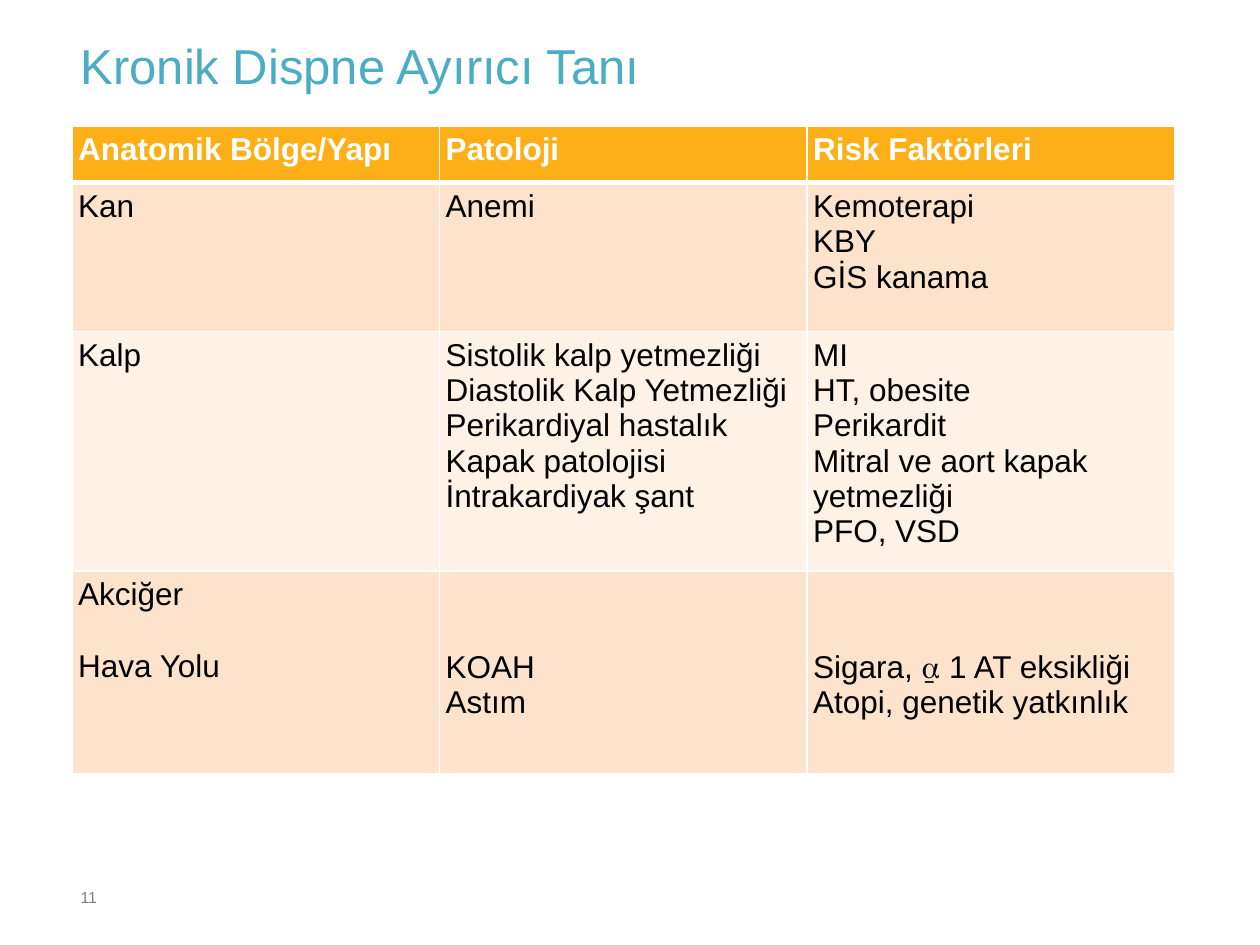
"""Build a slide with a table of causes of chronic dyspnoea."""
import pptx
import pptx.dml.color
import pptx.enum.text
import pptx.oxml
import pptx.oxml.ns
import pptx.util

WIDE, HIGH = 10, 7.5
PAD = 0.05
LINE = 18 * 1.15 / 72
ROWS = [0.45, 1.18, 1.9, 1.61]
FILLS = ["FCAF17", "FEE3CC", "FEF2E7", "FEE3CC"]
CELLS = [
    ["Anatomik Bölge/Yapı", "Patoloji", "Risk Faktörleri"],
    ["Kan", "Anemi", "Kemoterapi\vKBY\vGİS kanama"],
    [
        "Kalp",
        "Sistolik kalp yetmezliği\nDiastolik Kalp Yetmezliği\n"
        "Perikardiyal hastalık\nKapak patolojisi\nİntrakardiyak şant",
        "MI\vHT, obesite\vPerikardit\vMitral ve aort kapak yetmezliği\vPFO, VSD",
    ],
    [
        "Akciğer\nHava Yolu",
        "KOAH\nAstım",
        "Sigara, ⍶ 1 AT eksikliği\nAtopi, genetik yatkınlık",
    ],
]


def inch(size):
    """Turn inches into a length."""
    return pptx.util.Inches(size)


def tint(hue):
    """Turn a hex string into a colour."""
    return pptx.dml.color.RGBColor.from_string(hue)


def style(para, size, hue, bold=False):
    """Set the font of a paragraph."""
    font = para.font
    font.name = "Arial"
    font.size = pptx.util.Pt(size)
    font.bold = bold
    font.color.rgb = tint(hue)


def inset(box):
    """Give a cell or text frame even margins."""
    box.margin_left = box.margin_right = inch(PAD)
    box.margin_top = box.margin_bottom = inch(PAD)


def edge(cell, side, width):
    """Draw one white border of a cell."""
    props = cell._tc.get_or_add_tcPr()
    line = pptx.oxml.parse_xml(
        f'<a:ln{side} {pptx.oxml.ns.nsdecls("a")} w="{width * 12700}">'
        f'<a:solidFill><a:srgbClr val="FFFFFF"/></a:solidFill></a:ln{side}>'
    )
    props.insert("LRTB".index(side), line)


def fill(cell, text, row):
    """Write and format one table cell."""
    head = row == 0
    cell.text = text
    inset(cell)
    cell.fill.solid()
    cell.fill.fore_color.rgb = tint(FILLS[row])
    for para in cell.text_frame.paragraphs:
        style(para, 18, "FFFFFF" if head else "000000", head)
    thick = {(0, "B"), (1, "T")}
    for side in "LRTB":
        edge(cell, side, 3 if (row, side) in thick else 1)


def grid(slide):
    """Add the table and space out its last row."""
    cols = len(CELLS[0])
    frame = slide.shapes.add_table(
        len(ROWS), cols, inch(0.57), inch(1), inch(8.75), inch(sum(ROWS))
    )
    table = frame.table
    for row, texts in enumerate(CELLS):
        table.rows[row].height = inch(ROWS[row])
        for col, text in enumerate(texts):
            fill(table.cell(row, col), text, row)
    last = len(ROWS) - 1
    paras = table.cell(last, 0).text_frame.paragraphs
    paras[1].space_before = pptx.util.Pt(LINE * 72)
    for col in range(1, cols):
        table.cell(last, col).margin_top = inch(PAD + 2 * LINE)


def title(slide, text):
    """Place the title at the top left."""
    shape = slide.shapes.title
    shape.left, shape.top = inch(0.59), inch(0.34)
    shape.width, shape.height = inch(9.1), inch(0.88)
    frame = shape.text_frame
    frame.text = text
    inset(frame)
    frame.auto_size = pptx.enum.text.MSO_AUTO_SIZE.NONE
    frame.vertical_anchor = pptx.enum.text.MSO_ANCHOR.TOP
    para = frame.paragraphs[0]
    para.alignment = pptx.enum.text.PP_ALIGN.LEFT
    para.line_spacing = 0.75
    style(para, 28, "4BACC6")


def number(slide, text):
    """Add the page number at the bottom left."""
    box = slide.shapes.add_textbox(inch(0.59), inch(7), inch(0.24), inch(0.23))
    frame = box.text_frame
    frame.text = text
    inset(frame)
    frame.word_wrap = False
    frame.auto_size = pptx.enum.text.MSO_AUTO_SIZE.SHAPE_TO_FIT_TEXT
    style(frame.paragraphs[0], 9, "7F7F7F")


def main():
    """Build and save the slide."""
    deck = pptx.Presentation()
    deck.slide_width, deck.slide_height = inch(WIDE), inch(HIGH)
    slide = deck.slides.add_slide(deck.slide_layouts[5])
    title(slide, "Kronik Dispne Ayırıcı Tanı")
    grid(slide)
    number(slide, "11")
    deck.save("out.pptx")


if __name__ == "__main__":
    main()
